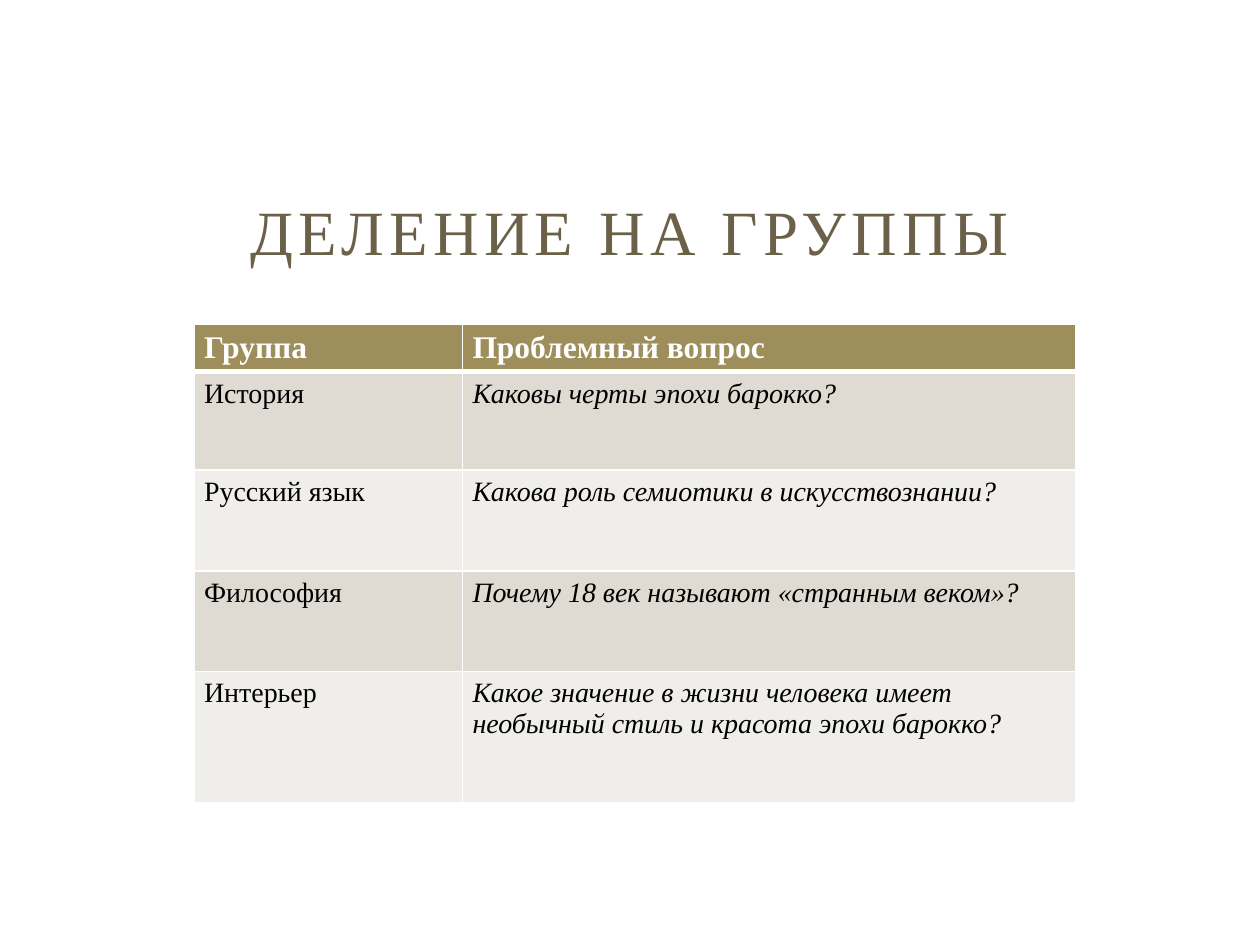
from lxml import etree
from pptx import Presentation
from pptx.dml.color import RGBColor
from pptx.enum.text import MSO_ANCHOR, PP_ALIGN
from pptx.oxml.ns import qn
from pptx.util import Inches, Pt


def write(tf, text, size, color, bold=False, italic=False, align=PP_ALIGN.LEFT, spacing=0):
    p = tf.paragraphs[0]
    p.alignment = align
    r = p.add_run()
    r.text = text
    f = r.font
    f.name, f.size, f.bold, f.italic = "Times New Roman", Pt(size), bold, italic
    f.color.rgb = RGBColor.from_string(color)
    if spacing:
        r._r.get_or_add_rPr().set("spc", str(spacing * 100))


def border(cell, side, color, width):
    ln = etree.SubElement(cell._tc.get_or_add_tcPr(), qn(f"a:ln{side}"), w=str(Pt(width)))
    fill = etree.SubElement(ln, qn("a:solidFill"))
    etree.SubElement(fill, qn("a:srgbClr"), val=color)


prs = Presentation()
prs.slide_width, prs.slide_height = Inches(10), Inches(7.5)
s = prs.slides.add_slide(prs.slide_layouts[5])

title = s.shapes.title
title.left, title.top = int(prs.slide_width * 0.15), int(prs.slide_height * 0.19)
title.width, title.height = int(prs.slide_width * 0.7), int(prs.slide_height * 0.1)
title.text_frame.vertical_anchor = MSO_ANCHOR.BOTTOM
write(title.text_frame, "ДЕЛЕНИЕ НА ГРУППЫ", 36, "6B6149", align=PP_ALIGN.CENTER, spacing=3)

rows = [
    ("Группа", "Проблемный вопрос"),
    ("История", "Каковы черты эпохи барокко?"),
    ("Русский язык", "Какова роль семиотики в искусствознании?"),
    ("Философия", "Почему 18 век называют «странным веком»?"),
    ("Интерьер", "Какое значение в жизни человека имеет необычный стиль и красота эпохи барокко?"),
]
widths = [2.13, 4.87]
heights = [0.38, 0.78, 0.8, 0.8, 1.04]
bands = ["F0EEEA", "DFDBD2"]

table = s.shapes.add_table(
    len(rows), len(widths), Inches(1.54), Inches(2.57), Inches(sum(widths)), Inches(sum(heights))
).table
for column, width in zip(table.columns, widths):
    column.width = Inches(width)
for i, (texts, height) in enumerate(zip(rows, heights)):
    table.rows[i].height = Inches(height)
    header = i == 0
    for j, text in enumerate(texts):
        cell = table.cell(i, j)
        cell.margin_left = cell.margin_right = Inches(0.08)
        cell.margin_top = cell.margin_bottom = Inches(0.05)
        for side in "LRTB":
            thick = (header and side == "B") or (i == 1 and side == "T")
            border(cell, side, "FFFFFF", 3 if thick else 1)
        cell.fill.solid()
        cell.fill.fore_color.rgb = RGBColor.from_string("9E8E5C" if header else bands[i % 2])
        write(cell.text_frame, text, 18 if header else 16, "FFFFFF" if header else "000000",
              bold=header, italic=not header and j == 1)

prs.save("out.pptx")
